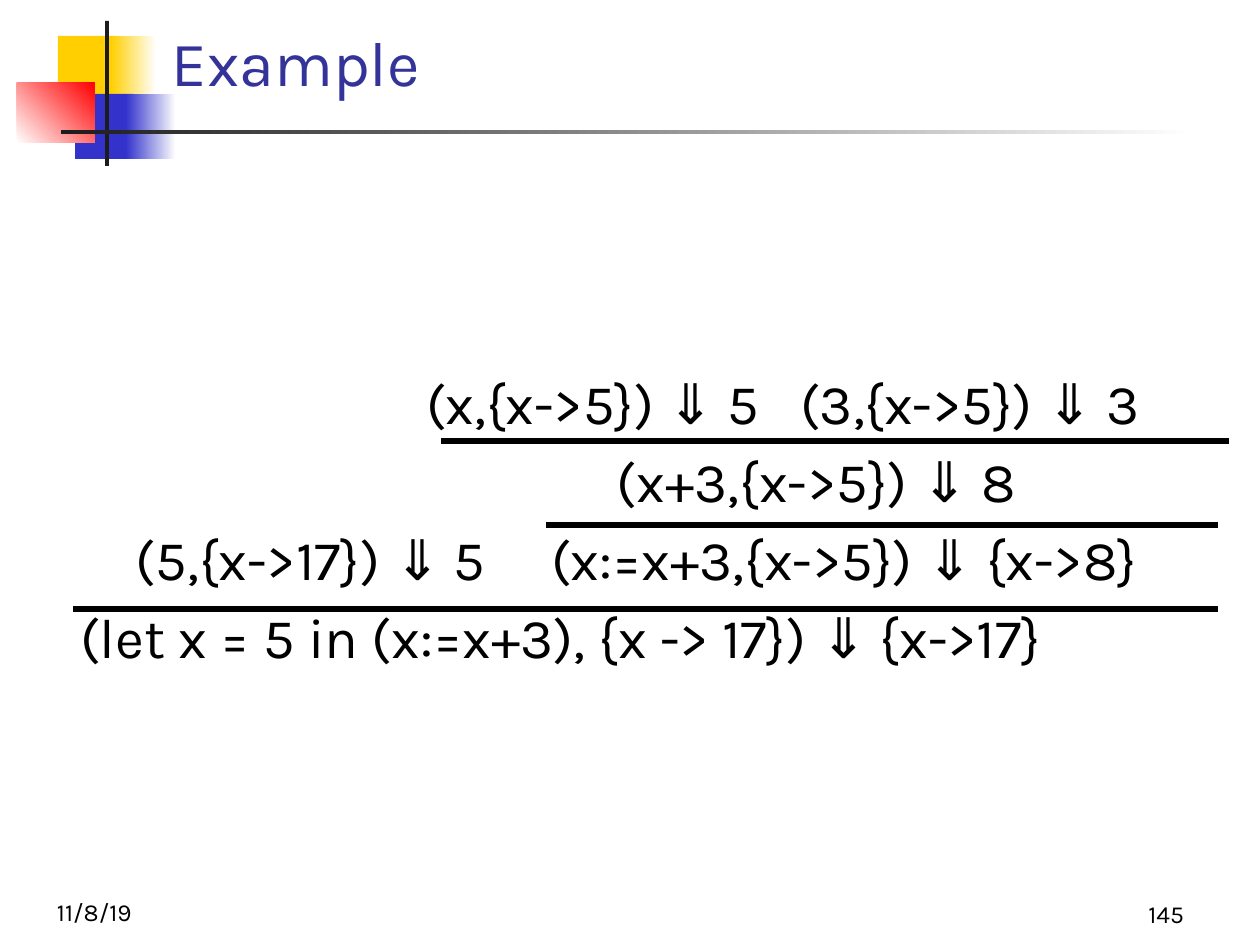
from pptx import Presentation
from pptx.dml.color import RGBColor
from pptx.enum.shapes import MSO_CONNECTOR, MSO_SHAPE
from pptx.enum.text import MSO_ANCHOR, PP_ALIGN
from pptx.util import Emu, Pt
from pptx.oxml.ns import qn
from lxml import etree

RECT = MSO_SHAPE.RECTANGLE
LINE = MSO_CONNECTOR.STRAIGHT
LEFT, MID, RIGHT = PP_ALIGN.LEFT, PP_ALIGN.CENTER, PP_ALIGN.RIGHT
TOP, BOTTOM = MSO_ANCHOR.TOP, MSO_ANCHOR.BOTTOM
FONT = "Karla"
SCALE = 914400 / 126


def px(n):
    return Emu(round(n * SCALE))


def color(code):
    return RGBColor.from_string(code)


def add_rect(slide, box, start, end=None, angle=0):
    """Solid rectangle, or a gradient one when an end colour is given."""
    shape = slide.shapes.add_shape(RECT, *map(px, box))
    shape.shadow.inherit = False
    shape.line.fill.background()
    fill = shape.fill
    if end is None:
        fill.solid()
        fill.fore_color.rgb = color(start)
        return
    fill.gradient()
    fill.gradient_angle = angle
    for stop, code in zip(fill.gradient_stops, (start, end)):
        stop.color.rgb = color(code)


def add_text(slide, box, text, size, code="000000", align=LEFT,
             anchor=BOTTOM, pad=(12, 6)):
    frame = slide.shapes.add_textbox(*map(px, box)).text_frame
    frame.word_wrap = True
    frame.vertical_anchor = anchor
    frame.margin_left = frame.margin_right = px(pad[0])
    frame.margin_top = frame.margin_bottom = px(pad[1])
    frame.text = text
    para = frame.paragraphs[0]
    para.alignment = align
    font = para.runs[0].font
    font.name, font.size = FONT, Pt(size)
    font.color.rgb = color(code)


def add_rule(slide, left, right, y):
    """Horizontal inference bar."""
    line = slide.shapes.add_connector(LINE, px(left), px(y), px(right), px(y))
    line.line.width = Pt(3)
    line.line.color.rgb = color("000000")
    etree.SubElement(line._element.spPr, qn("a:effectLst"))


def add_motif(slide, x, y):
    """Coloured squares and the crossed bars behind the title."""
    parts = [
        ((41, 15, 60, 65), "FFCF01"),
        ((94, 15, 45, 65), "FFCF01", "FFFFFF"),
        ((58, 73, 58, 65), "3333CC"),
        ((109, 73, 50, 65), "3333CC", "FFFFFF"),
        ((0, 62, 78, 60), "FFFFFF", "FF0000", 45),
        ((88, 0, 4, 145), "1C1C1C"),
        ((44, 109, 1134, 4), "1C1C1C", "FFFFFF"),
    ]
    for (left, top, wide, high), *paint in parts:
        add_rect(slide, (x + left, y + top, wide, high), *paint)


def add_proof(slide, x, y):
    """Derivation tree: rows of judgments, with a bar between each two."""
    pitch, high, slack = 78, 74, 20
    rows = [
        [(345, 330, "(x,{x->5}) ⇓ 5"), (719, 336, "(3,{x->5}) ⇓ 3")],
        [(535, 397, "(x+3,{x->5}) ⇓ 8")],
        [(55, 346, "(5,{x->17}) ⇓ 5"),
         (471, 581, "(x:=x+3,{x->5}) ⇓ {x->8}")],
        [(0, 957, "(let x = 5 in (x:=x+3), {x -> 17}) ⇓ {x->17}")],
    ]
    for i, row in enumerate(rows):
        for left, wide, text in row:
            box = (x + left - slack, y + i * pitch, wide + 2 * slack, high)
            add_text(slide, box, text, 32, align=MID, anchor=TOP, pad=(0, 0))
    bars = [(358, 1146), (463, 1135), (-10, 1135)]
    for i, (left, right) in enumerate(bars):
        add_rule(slide, x + left, x + right, y + 72 + i * 84)


def main():
    deck = Presentation()
    deck.slide_width, deck.slide_height = px(1260), px(945)
    slide = deck.slides.add_slide(deck.slide_layouts[6])
    add_motif(slide, 17, 21)
    add_text(slide, (160, 22, 1074, 83), "Example", 36, "333399")
    add_proof(slide, 83, 369)
    add_text(slide, (45, 869, 262, 63), "11/8/19", 14)
    add_text(slide, (934, 871, 262, 63), "145", 14, align=RIGHT)
    deck.save("out.pptx")


if __name__ == "__main__":
    main()
